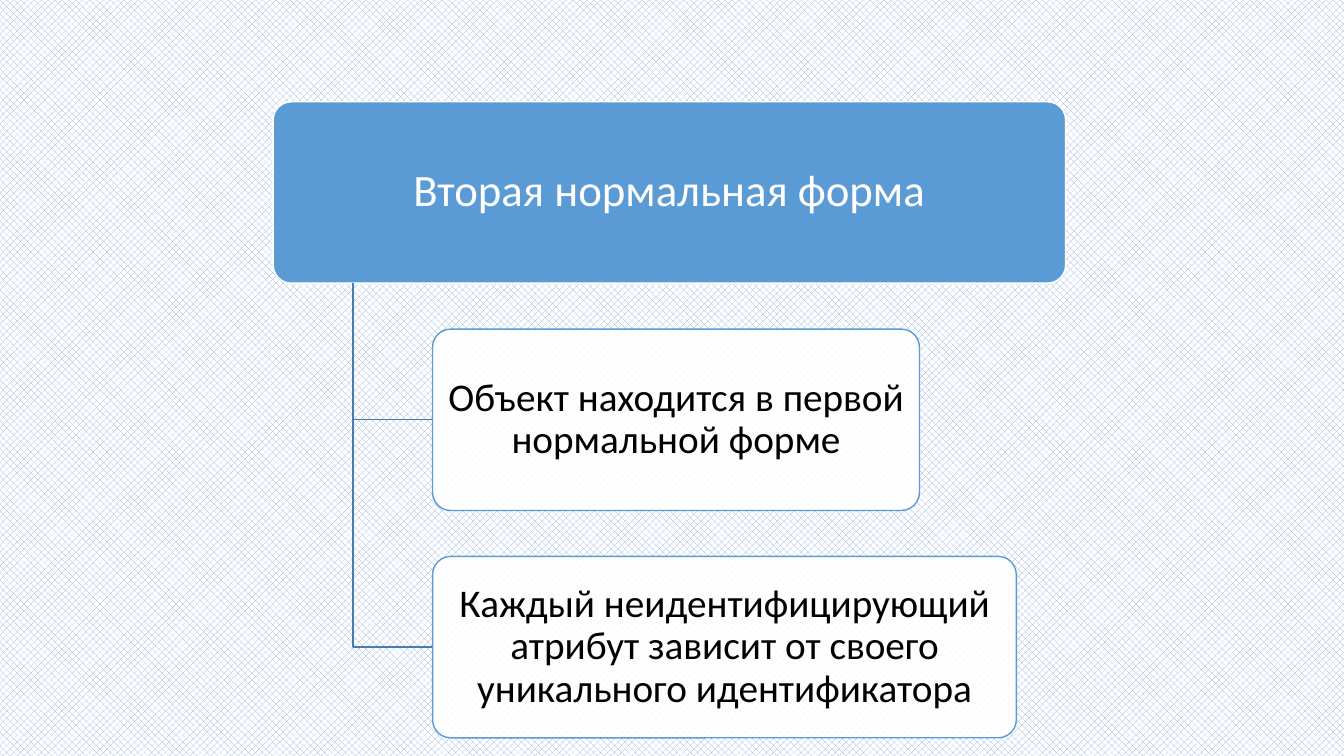
from lxml import etree
from pptx import Presentation
from pptx.dml.color import RGBColor
from pptx.enum import dml, shapes, text
from pptx.oxml.ns import qn
from pptx.util import Inches, Pt

BLUE = RGBColor(0x5B, 0x9B, 0xD5)
LINK = RGBColor(0x49, 0x7C, 0xAB)
PATTERN = RGBColor(0x8F, 0xAA, 0xDC)
WHITE = RGBColor(0xFF, 0xFF, 0xFF)
BLACK = RGBColor(0, 0, 0)

TOP, HEIGHT, STEP = 1.01, 1.8, 2.255
TRUNK_X, CHILD_X = 3.5, 4.29


def add_box(s, left, top, width, label, size, inset, fill, line, color):
    sp = s.shapes.add_shape(shapes.MSO_SHAPE.ROUNDED_RECTANGLE,
                            Inches(left), Inches(top), Inches(width), Inches(HEIGHT))
    sp.adjustments[0] = 0.1
    sp.shadow.inherit = False
    sp.fill.solid()
    sp.fill.fore_color.rgb = fill
    sp.line.color.rgb = line
    sp.line.width = Pt(1)
    tf = sp.text_frame
    frame = {"word_wrap": True, "vertical_anchor": text.MSO_ANCHOR.MIDDLE,
             "margin_left": Inches(inset), "margin_right": Inches(inset),
             "margin_top": Inches(0.04), "margin_bottom": Inches(0.04)}
    for name, value in frame.items():
        setattr(tf, name, value)
    p = tf.paragraphs[0]
    p.alignment = text.PP_ALIGN.CENTER
    p.line_spacing = 0.9
    r = p.add_run()
    r.text = label
    for name, value in {"name": "Calibri", "size": Pt(size)}.items():
        setattr(r.font, name, value)
    r.font.color.rgb = color
    return sp


prs = Presentation()
prs.slide_width, prs.slide_height = Inches(13.33), Inches(7.5)
s = prs.slides.add_slide(prs.slide_layouts[6])
bg = s.background.fill
bg.patterned()
bg.pattern = dml.MSO_PATTERN.PERCENT_50
bg.fore_color.rgb = PATTERN
bg.back_color.rgb = WHITE

add_box(s, 2.71, TOP, 7.86, "Вторая нормальная форма", 32, 0.07, BLUE, WHITE, WHITE)

children = [
    (4.83, "Объект находится в первой нормальной форме"),
    (5.79, "Каждый неидентифицирующий атрибут зависит от своего уникального идентификатора"),
]
for i, (width, label) in enumerate(children, 1):
    top = TOP + i * STEP
    middle = Inches(top + HEIGHT / 2)
    fb = s.shapes.build_freeform(Inches(TRUNK_X), Inches(TOP + HEIGHT))
    fb.add_line_segments([(Inches(TRUNK_X), middle), (Inches(CHILD_X), middle)], close=False)
    link = fb.convert_to_shape()
    link.shadow.inherit = False
    link.fill.background()
    link.line.color.rgb = LINK
    link.line.width = Pt(1)

    sp = add_box(s, CHILD_X, top, width, label, 28, 0.06, WHITE, BLUE, BLACK)
    clr = sp.fill._xPr.find(qn("a:solidFill"))[0]
    etree.SubElement(clr, qn("a:alpha"), val="90000")

prs.save("out.pptx")
